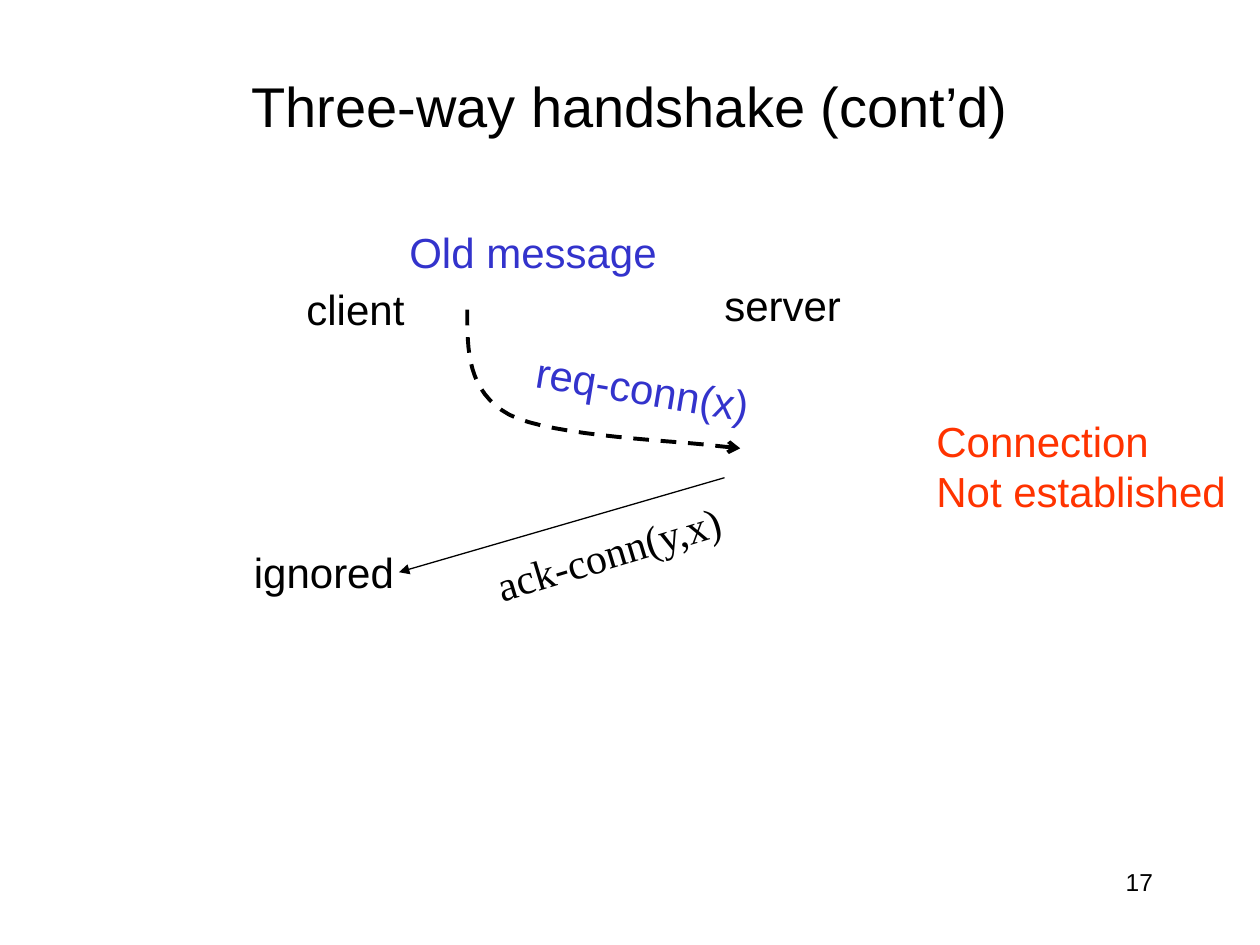
from typing import NamedTuple

from lxml.etree import SubElement
from pptx import Presentation
from pptx.dml.color import RGBColor
from pptx.enum.dml import MSO_LINE as Dash
from pptx.enum.shapes import MSO_CONNECTOR as Link
from pptx.enum.text import MSO_ANCHOR as Anchor, MSO_AUTO_SIZE as Fit, PP_ALIGN as Align
from pptx.oxml.ns import qn
from pptx.util import Inches, Pt

COLS, ROWS = 120, 90
BLACK, BLUE, RED = "000000", "3333CC", "FF3300"

Point = tuple[float, float]


class Label(NamedTuple):
    text: str
    col: float
    row: float
    wide: float
    high: float = 6
    color: str = BLACK
    turn: float = 0
    font: str = "Arial"


HOSTS = [
    Label("client", 28, 26.4, 11.8),
    Label("server", 67.8, 26, 13.5),
]
REQUEST = [
    Label("Old message", 37.8, 21, 26, color=BLUE),
    Label("req-conn(x)", 49.8, 34, 22.9, color=BLUE, turn=9.5),
]
REPLY = [
    Label("ack-conn(y,x)", 45.72, 49.6, 24.72, turn=-16.87, font="Times New Roman"),
    Label("ignored", 23, 51.5, 15.85),
    Label("Connection\nNot established", 88, 38.97, 30, 10.8, RED),
]

# Path of the delayed request: a start, then Bezier pieces
START = (44.5, 29.5)
BENDS = [
    [(44.5, 33.4), (44.5, 37.3), (48.5, 39.5)],
    [(52.5, 41.6), (65, 42), (68.5, 42.5)],
]
END = (70.5, 42.7)

prs = Presentation()
prs.slide_width, prs.slide_height = Inches(10), Inches(7.5)
slide = prs.slides.add_slide(prs.slide_layouts[5])
shapes = slide.shapes


def x(col: float) -> int:
    return round(prs.slide_width * col / COLS)


def y(row: float) -> int:
    return round(prs.slide_height * row / ROWS)


def paint(code: str) -> RGBColor:
    return RGBColor.from_string(code)


def write(shape, text: str, size=24, color=BLACK, font="Arial",
          align=Align.LEFT, anchor=Anchor.TOP, wrap=False) -> None:
    frame = shape.text_frame
    frame.text = text
    frame.word_wrap = wrap
    frame.auto_size = Fit.NONE if wrap else Fit.SHAPE_TO_FIT_TEXT
    frame.vertical_anchor = anchor
    for para in frame.paragraphs:
        para.alignment = align
        para.font.size, para.font.name = Pt(size), font
        para.font.color.rgb = paint(color)


def box(col: float, row: float, wide: float, high: float):
    return shapes.add_textbox(x(col), y(row), x(wide), y(high))


def label(items: list[Label]) -> None:
    for item in items:
        shape = box(item.col, item.row, item.wide, item.high)
        write(shape, item.text, color=item.color, font=item.font)
        shape.rotation = item.turn


def stroke(shape, width: float, head: str) -> None:
    shape.line.color.rgb = paint(BLACK)
    shape.line.width = Pt(width)
    SubElement(shape.line._get_or_add_ln(), qn("a:tailEnd"), type=head)


def bezier(a: Point, b: Point, c: Point, d: Point, steps: int = 16) -> list[Point]:
    def at(t: float, i: int) -> float:
        s = 1 - t
        return s**3 * a[i] + 3 * s * s * t * b[i] + 3 * s * t * t * c[i] + t**3 * d[i]
    return [(at(k / steps, 0), at(k / steps, 1)) for k in range(1, steps + 1)]


def curve() -> None:
    points, last = [], START
    for bend in BENDS:
        points += bezier(last, *bend)
        last = bend[-1]
    build = shapes.build_freeform(x(START[0]), y(START[1]))
    build.add_line_segments([(x(c), y(r)) for c, r in points + [END]], close=False)
    shape = build.convert_to_shape()
    shape.shadow.inherit = False
    shape.fill.background()
    shape.line.dash_style = Dash.DASH
    stroke(shape, 2.25, "arrow")


def arrow(start: Point, end: Point) -> None:
    line = shapes.add_connector(Link.STRAIGHT, x(start[0]), y(start[1]), x(end[0]), y(end[1]))
    stroke(line, 0.75, "triangle")
    SubElement(line._element.spPr, qn("a:effectLst"))


# Page number and title
write(box(86, 82, 25, 6), "17", size=14, align=Align.RIGHT, wrap=True)
title = shapes.title
title.left, title.top, title.width, title.height = x(9), y(5), x(102), y(10)
write(title, "Three-way handshake (cont’d)", size=32, align=Align.CENTER,
      anchor=Anchor.MIDDLE, wrap=True)

# Client, server and the delayed request
label(HOSTS)
curve()
label(REQUEST)

# Reply and outcome
arrow((69, 45.5), (38, 54.5))
label(REPLY)

prs.save("out.pptx")
